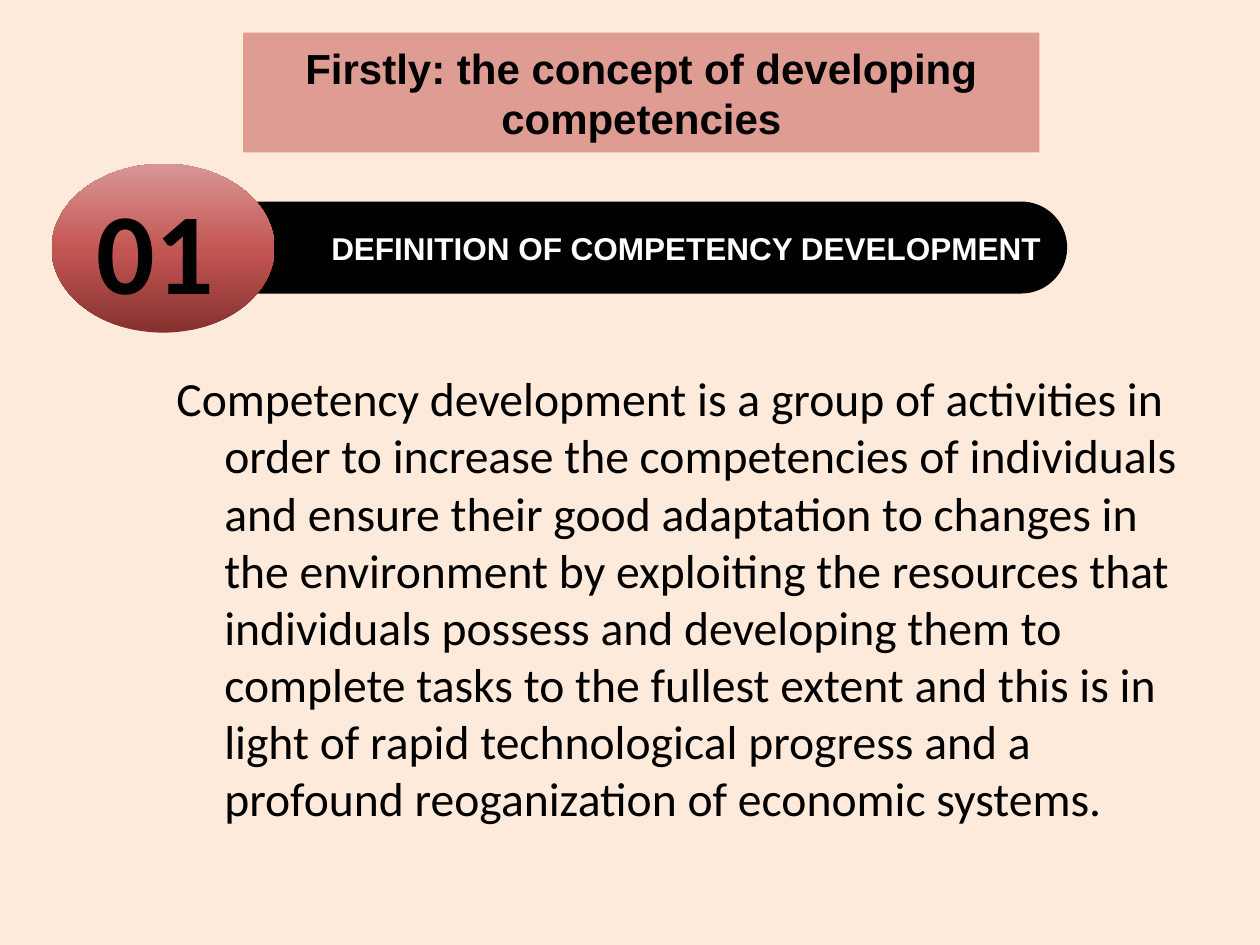
from copy import deepcopy
from dataclasses import dataclass

from lxml import etree
from pptx import Presentation
from pptx.dml.color import RGBColor
from pptx.enum.shapes import MSO_SHAPE
from pptx.enum.text import MSO_ANCHOR, MSO_AUTO_SIZE, PP_ALIGN
from pptx.oxml.ns import qn
from pptx.util import Inches, Pt

PILL, OVAL = MSO_SHAPE.ROUNDED_RECTANGLE, MSO_SHAPE.OVAL
LEFT, CENTER, RIGHT = PP_ALIGN.LEFT, PP_ALIGN.CENTER, PP_ALIGN.RIGHT
MIDDLE, TOP = MSO_ANCHOR.MIDDLE, MSO_ANCHOR.TOP
NO_AUTOFIT = MSO_AUTO_SIZE.NONE


@dataclass(frozen=True)
class Theme:
    background: str = "FDEADA"
    dark: str = "000000"
    light: str = "FFFFFF"
    accent: str = "C0504D"
    badge_stops: tuple = ((0, "85312F"), (0.48, "C25552"), (1, "D99694"))
    heading_font: str = "Arial"
    body_font: str = "Calibri"
    title_size: float = 24
    section_size: float = 18
    number_size: float = 66
    body_size: float = 27.2


class SlideBuilder:
    def __init__(self, slide, theme):
        self.slide = slide
        self.theme = theme
        fill = slide.background.fill
        fill.solid()
        fill.fore_color.rgb = RGBColor.from_string(theme.background)

    def place(self, shape, box):
        shape.left, shape.top, shape.width, shape.height = map(Inches, box)

    def set_text(self, shape, text, font, size, color, align, bold=False,
                 anchor=MIDDLE, inset=0.1):
        frame = shape.text_frame
        frame.word_wrap = True
        frame.auto_size = NO_AUTOFIT
        frame.vertical_anchor = anchor
        frame.margin_left = frame.margin_right = Inches(0.1)
        frame.margin_top = frame.margin_bottom = Inches(inset)
        frame.text = text
        paragraph = frame.paragraphs[0]
        paragraph.alignment = align
        paragraph.space_before = Pt(0)
        if shape.is_placeholder and anchor == TOP:
            # Unbulleted paragraph with a hanging indent
            properties = paragraph._p.get_or_add_pPr()
            properties.set("marL", str(Inches(0.38)))
            properties.set("indent", str(-Inches(0.38)))
            etree.SubElement(properties, qn("a:buNone"))
        paragraph.font.name = font
        paragraph.font.size = Pt(size)
        paragraph.font.bold = bold
        paragraph.font.color.rgb = RGBColor.from_string(color)

    def title(self, text, box):
        """Title placeholder shaped as a half-transparent pill."""
        theme, title = self.theme, self.slide.shapes.title
        self.place(title, box)
        properties = title._element.spPr
        geometry = etree.SubElement(properties, qn("a:prstGeom"), prst="roundRect")
        guides = etree.SubElement(geometry, qn("a:avLst"))
        etree.SubElement(guides, qn("a:gd"), name="adj", fmla="val 50000")
        title.fill.solid()
        title.fill.fore_color.rgb = RGBColor.from_string(theme.accent)
        color = properties.find(".//" + qn("a:srgbClr"))
        etree.SubElement(color, qn("a:alpha"), val="50000")
        self.set_text(title, text, theme.heading_font, theme.title_size,
                      theme.dark, CENTER, bold=True)

    def body(self, text, box):
        theme, body = self.theme, self.slide.placeholders[1]
        self.place(body, box)
        self.set_text(body, text, theme.body_font, theme.body_size,
                      theme.dark, LEFT, anchor=TOP, inset=0.05)

    def plain_shape(self, kind, box):
        shape = self.slide.shapes.add_shape(kind, *map(Inches, box))
        shape.shadow.inherit = False
        shape.line.fill.background()
        return shape

    def section_bar(self, text, box):
        theme = self.theme
        bar = self.plain_shape(PILL, box)
        bar.adjustments[0] = 0.5
        bar.fill.solid()
        bar.fill.fore_color.rgb = RGBColor.from_string(theme.dark)
        self.set_text(bar, text, theme.heading_font, theme.section_size,
                      theme.light, RIGHT, bold=True)

    def number_badge(self, text, box):
        theme = self.theme
        badge = self.plain_shape(OVAL, box)
        badge.fill.gradient()
        badge.fill.gradient_angle = 90
        # The default gradient has two stops; add one for the middle colour
        stop_list = badge._element.spPr.find(".//" + qn("a:gsLst"))
        stop_list.insert(1, deepcopy(stop_list[0]))
        for stop, (position, color) in zip(badge.fill.gradient_stops, theme.badge_stops):
            stop.position = position
            stop.color.rgb = RGBColor.from_string(color)
        self.set_text(badge, text, theme.body_font, theme.number_size,
                      theme.dark, LEFT, bold=True)


def main():
    deck = Presentation()
    deck.slide_width, deck.slide_height = Inches(10), Inches(7.5)
    builder = SlideBuilder(deck.slides.add_slide(deck.slide_layouts[1]), Theme())

    # Title and definition
    builder.title("Firstly: the concept of developing competencies",
                  (1.93, 0.26, 6.32, 0.95))
    builder.body(
        "Competency development is a group of activities in order to increase "
        "the competencies of individuals and ensure their good adaptation to "
        "changes in the environment by exploiting the resources that individuals "
        "possess and developing them to complete tasks to the fullest extent and "
        "this is in light of rapid technological progress and a profound "
        "reoganization of economic systems.",
        (1.3, 2.88, 8.2, 3.82))

    # Numbered section heading
    builder.section_bar("DEFINITION OF COMPETENCY DEVELOPMENT", (0.91, 1.6, 7.56, 0.73))
    builder.number_badge("01", (0.41, 1.3, 1.77, 1.34))

    deck.save("out.pptx")


if __name__ == "__main__":
    main()
